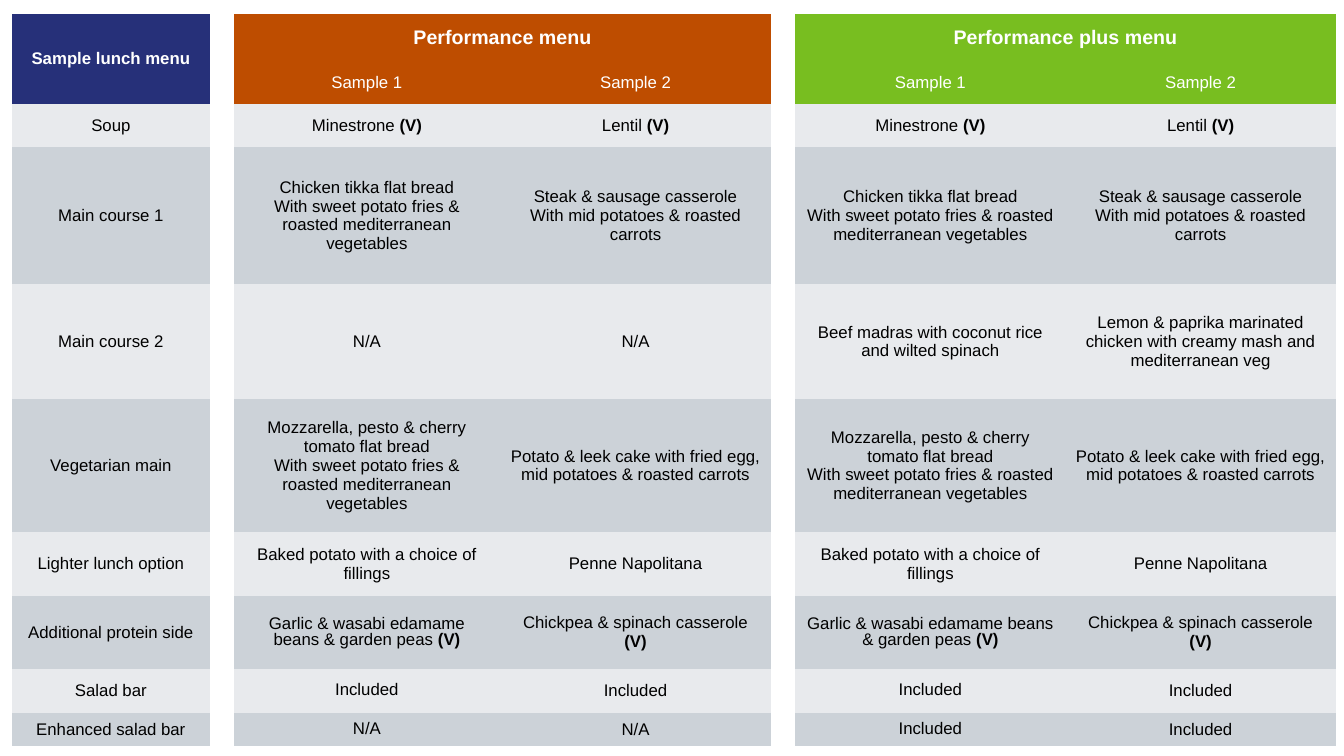
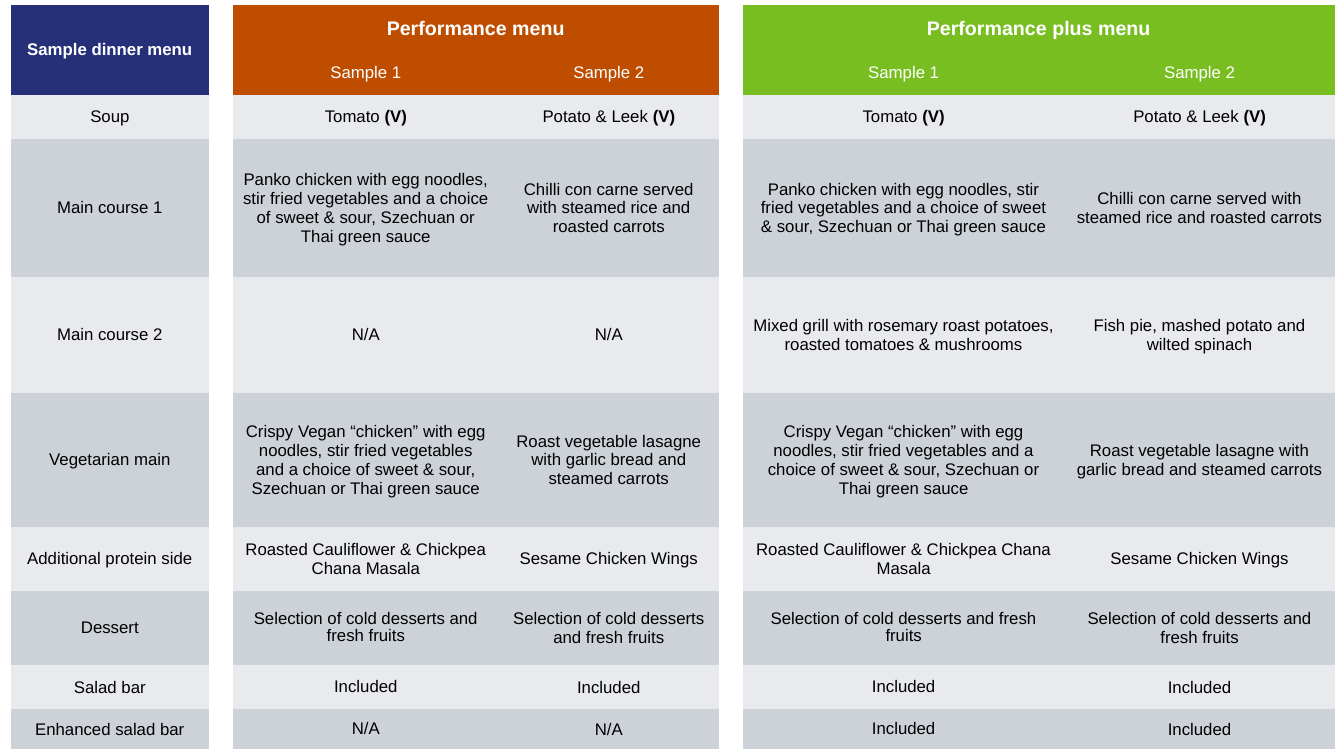
import lxml.etree
import pptx
import pptx.dml.color
import pptx.enum.text
import pptx.oxml.ns
import pptx.util

Inches = pptx.util.Inches
Pt = pptx.util.Pt

COLOURS = {
    "navy": "263079",
    "orange": "BE4D00",
    "green": "78BE20",
    "light": "E8EAED",
    "dark": "CCD2D8",
    "white": "FFFFFF",
    "black": "000000",
}
FONT = "Arial"
PLAIN_TABLE_STYLE = "{2D5ABB26-0587-4C30-8999-92F81FD0307C}"
VEGETARIAN_MARK = "(V)"
HEADER_ROWS = 2
FIRST_TIGHT_ROW = 7
GAP_COLUMNS = (1, 4)
# Title, colour and first column of each menu
MENUS = (
    ("Performance menu", "orange", 2),
    ("Performance plus menu", "green", 5),
)

NOT_OFFERED = ("N/A", "N/A")
INCLUDED = ("Included", "Included")
FRIES = "With sweet potato fries & roasted mediterranean vegetables"
ASIAN_SIDES = ("stir fried vegetables and a choice of sweet & sour, "
               "Szechuan or Thai green sauce")
DESSERT = "Selection of cold desserts and fresh fruits"

# Course, the two samples, and the plus samples where they differ
LUNCH = {
    "title": "Sample lunch menu",
    "left": 0.12,
    "top": 0.14,
    "widths": (1.96, 0.23, 2.64, 2.69, 0.23, 2.68, 2.68),
    "heights": (0.46, 0.43, 0.43, 1.36, 1.14, 1.32, 0.63, 0.73, 0.43, 0.33),
    "courses": (
        ("Soup", ("Minestrone (V)", "Lentil (V)")),
        ("Main course 1", (
            "Chicken tikka flat bread\n" + FRIES,
            "Steak & sausage casserole\nWith mid potatoes & roasted carrots")),
        ("Main course 2", NOT_OFFERED, (
            "Beef madras with coconut rice and wilted spinach",
            "Lemon & paprika marinated chicken with creamy mash "
            "and mediterranean veg")),
        ("Vegetarian main", (
            "Mozzarella, pesto & cherry tomato flat bread\n" + FRIES,
            "Potato & leek cake with fried egg, "
            "mid potatoes & roasted carrots")),
        ("Lighter lunch option", (
            "Baked potato with a choice of fillings", "Penne Napolitana")),
        ("Additional protein side", (
            "Garlic & wasabi edamame beans & garden peas (V)",
            "Chickpea & spinach casserole (V)")),
        ("Salad bar", INCLUDED),
        ("Enhanced salad bar", NOT_OFFERED, INCLUDED),
    ),
}
DINNER = {
    "title": "Sample dinner menu",
    "left": 0.11,
    "top": 0.05,
    "widths": (1.96, 0.23, 2.64, 2.18, 0.23, 3.19, 2.68),
    "heights": (0.46, 0.43, 0.44, 1.37, 1.15, 1.33, 0.63, 0.74, 0.44, 0.39),
    "courses": (
        ("Soup", ("Tomato (V)", "Potato & Leek (V)")),
        ("Main course 1", (
            "Panko chicken with egg noodles, " + ASIAN_SIDES,
            "Chilli con carne served with steamed rice and roasted carrots")),
        ("Main course 2", NOT_OFFERED, (
            "Mixed grill with rosemary roast potatoes, "
            "roasted tomatoes & mushrooms",
            "Fish pie, mashed potato and wilted spinach")),
        ("Vegetarian main", (
            "Crispy Vegan “chicken” with egg noodles, " + ASIAN_SIDES,
            "Roast vegetable lasagne with garlic bread and steamed carrots")),
        ("Additional protein side", (
            "Roasted Cauliflower & Chickpea Chana Masala",
            "Sesame Chicken Wings")),
        ("Dessert", (DESSERT, DESSERT)),
        ("Salad bar", INCLUDED),
        ("Enhanced salad bar", NOT_OFFERED, INCLUDED),
    ),
}


def rgb(colour):
    return pptx.dml.color.RGBColor.from_string(COLOURS[colour])


def add_span(para, text, colour, **font_format):
    span = para.add_run()
    span.text = text
    values = {"name": FONT, "size": Pt(12), "bold": False, **font_format}
    for name, value in values.items():
        setattr(span.font, name, value)
    span.font.color.rgb = rgb(colour)


def fill_cell(cell, text, fill, colour="black", tight=False, **font_format):
    """Write one paragraph per line, with the vegetarian mark in bold."""
    cell.fill.solid()
    cell.fill.fore_color.rgb = rgb(fill)
    cell.vertical_anchor = pptx.enum.text.MSO_ANCHOR.MIDDLE
    for index, line in enumerate(text.split("\n")):
        frame = cell.text_frame
        para = frame.add_paragraph() if index else frame.paragraphs[0]
        para.alignment = pptx.enum.text.PP_ALIGN.CENTER
        if tight:
            para.line_spacing = 0.9
        dish, mark, _ = line.partition(VEGETARIAN_MARK)
        add_span(para, dish, colour, **font_format)
        if mark:
            add_span(para, mark, colour, bold=True)


def clear_gap(table):
    """Leave the gap columns unfilled, with text too small to stretch a row."""
    for row in table.rows:
        for column in GAP_COLUMNS:
            cell = row.cells[column]
            cell.fill.background()
            lxml.etree.SubElement(cell.text_frame.paragraphs[0]._p,
                                  pptx.oxml.ns.qn("a:endParaRPr"), sz="1200")


def add_plain_table(slide, menu):
    widths, heights = menu["widths"], menu["heights"]
    frame = slide.shapes.add_table(
        len(heights), len(widths), Inches(menu["left"]), Inches(menu["top"]),
        Inches(sum(widths)), Inches(sum(heights)))
    style = next(frame._element.iter(pptx.oxml.ns.qn("a:tableStyleId")))
    style.text = PLAIN_TABLE_STYLE
    table = frame.table
    for column, width in zip(table.columns, widths):
        column.width = Inches(width)
    for row, height in zip(table.rows, heights):
        row.height = Inches(height)
    return table


def add_headers(table, title):
    corner = table.cell(0, 0)
    corner.merge(table.cell(1, 0))
    fill_cell(corner, title, "navy", "white", bold=True)
    for name, fill, first in MENUS:
        band = table.cell(0, first)
        band.merge(table.cell(0, first + 1))
        fill_cell(band, name, fill, "white", bold=True, size=Pt(14))
        for sample in range(2):
            fill_cell(table.cell(1, first + sample), f"Sample {sample + 1}",
                      fill, "white")


def add_courses(table, courses):
    for row, (course, *choices) in enumerate(courses, HEADER_ROWS):
        fill = "dark" if row % 2 else "light"
        fill_cell(table.cell(row, 0), course, fill)
        for (_, _, first), dishes in zip(MENUS, (choices[0], choices[-1])):
            for sample, dish in enumerate(dishes):
                tight = sample == 0 and row >= FIRST_TIGHT_ROW
                fill_cell(table.cell(row, first + sample), dish, fill,
                          tight=tight)


def add_menu_slide(deck, menu):
    slide = deck.slides.add_slide(deck.slide_layouts.get_by_name("Blank"))
    table = add_plain_table(slide, menu)
    clear_gap(table)
    add_headers(table, menu["title"])
    add_courses(table, menu["courses"])


def main():
    deck = pptx.Presentation()
    deck.slide_width = Inches(13.33)
    deck.slide_height = Inches(7.5)
    for menu in (LUNCH, DINNER):
        add_menu_slide(deck, menu)
    deck.save("out.pptx")


if __name__ == "__main__":
    main()
